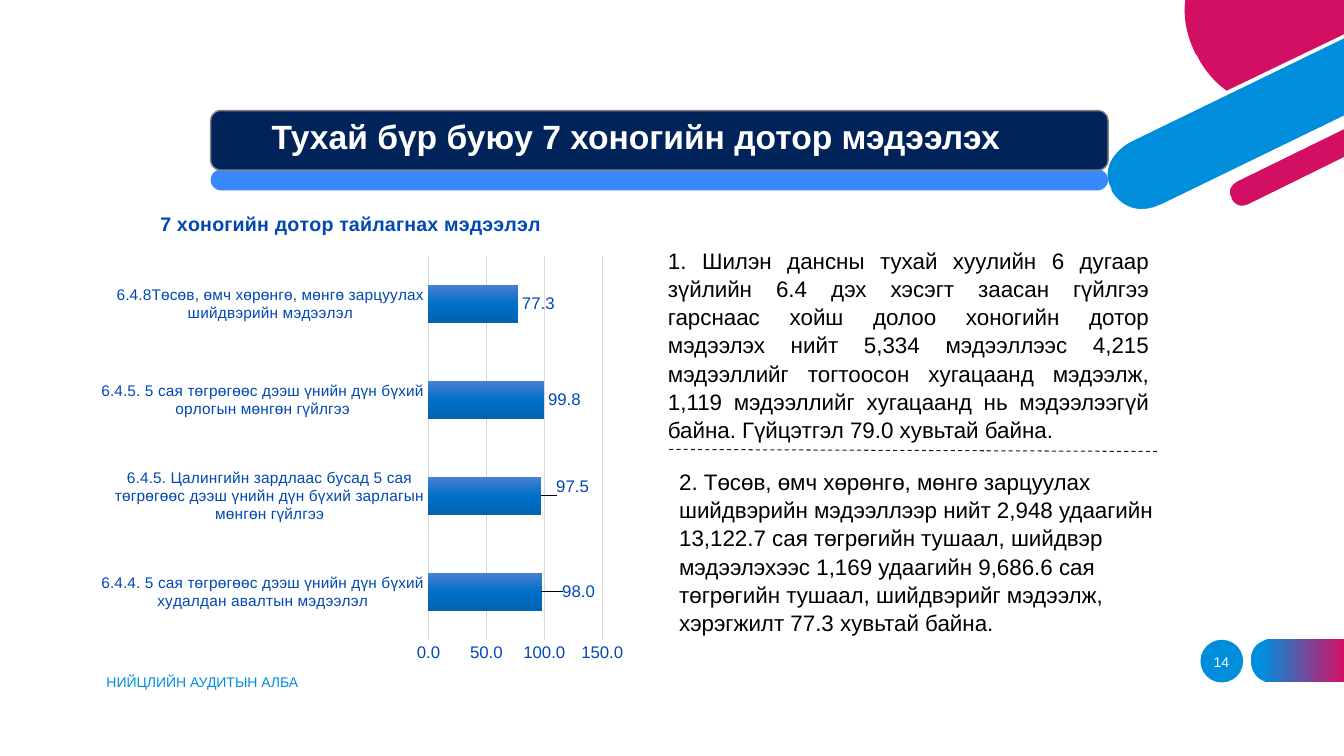
from lxml.etree import SubElement
from pptx import Presentation
from pptx.chart.data import CategoryChartData
from pptx.dml.color import RGBColor
from pptx.enum.chart import XL_CHART_TYPE as ChartType, XL_LABEL_POSITION as LabelPos, XL_TICK_MARK as Tick
from pptx.enum.dml import MSO_LINE as Dash
from pptx.enum.shapes import MSO_CONNECTOR as Connector, MSO_SHAPE as Shape
from pptx.enum.text import MSO_ANCHOR as Anchor, MSO_AUTO_SIZE as AutoSize, PP_ALIGN as Align
from pptx.oxml.ns import qn
from pptx.util import Pt

COLORS = {
    "sky": "008EDC", "pink": "D30F64", "white": "FFFFFF", "navy": "00245A",
    "band": "3888FF", "gray": "808080", "ink": "000000", "rule": "1C1C1C",
    "label": "0048B3", "grid": "D9D9D9",
    "bar_top": "4B80D0", "bar_mid": "006FC9", "bar_end": "0063B3",
}

CIRCLE = [(855.4, 40.3), (855.4, 40.3, 861.8, 54.7, 876.2, 64.8), (960, 24.5), (960, 0),
          (846.7, 0), (845.3, 10.8, 846.7, 23.8, 853.9, 38.2)]
WIDE_STRIPE = [(807.1, 100.1), (807.1, 100.1, 781.2, 113, 792.7, 136.1), (792.7, 136.8),
               (792.7, 136.8, 804.2, 159.8, 830.9, 146.9), (962, 83.2), (962, 24.9)]
THIN_STRIPE = [(962, 89.7), (883.4, 128.2), (883.4, 128.2, 873.4, 133.2, 878.4, 141.8),
               (878.4, 142.6), (878.4, 142.6, 882.7, 151.9, 892.8, 146.9), (962, 112.8)]
NUMBER_TAB = [(908.6, 487.4), (960, 487.4), (960, 456.5), (908.6, 456.5),
              (908.6, 456.5, 893.5, 456.5, 893.5, 471.6), (893.5, 472.3),
              (893.5, 472.3, 893.5, 487.4, 908.6, 487.4)]

MEASURES = [
    ("6.4.4. 5 сая төгрөгөөс дээш үнийн дүн бүхий худалдан авалтын мэдээлэл", 98.0),
    ("6.4.5. Цалингийн зардлаас бусад 5 сая төгрөгөөс дээш үнийн дүн бүхий зарлагын мөнгөн гүйлгээ", 97.5),
    ("6.4.5. 5 сая төгрөгөөс дээш үнийн дүн бүхий орлогын мөнгөн гүйлгээ", 99.8),
    ("6.4.8Төсөв, өмч хөрөнгө, мөнгө зарцуулах шийдвэрийн мэдээлэл", 77.3),
]
LABEL_SHIFTS = {0: (0.03, 0), 1: (0.02, -0.02)}

GLASS_TEXT = (
    "1. Шилэн дансны тухай хуулийн 6 дугаар зүйлийн 6.4 дэх хэсэгт заасан гүйлгээ гарснаас хойш "
    "долоо хоногийн дотор мэдээлэх нийт 5,334 мэдээллээс 4,215 мэдээллийг тогтоосон хугацаанд мэдээлж, "
    "1,119 мэдээллийг хугацаанд нь мэдээлээгүй байна. Гүйцэтгэл 79.0 хувьтай байна.")
BUDGET_TEXT = (
    "2. Төсөв, өмч хөрөнгө, мөнгө зарцуулах шийдвэрийн мэдээллээр нийт 2,948 удаагийн 13,122.7 сая "
    "төгрөгийн тушаал, шийдвэр мэдээлэхээс 1,169 удаагийн 9,686.6 сая төгрөгийн тушаал, шийдвэрийг "
    "мэдээлж, хэрэгжилт 77.3 хувьтай байна.")


def rgb(name):
    return RGBColor.from_string(COLORS[name])


def style_font(font, size, color, bold=False):
    font.name, font.size, font.bold = "Arial", Pt(size), bold
    font.color.rgb = rgb(color)


def write(frame, text, size=16, color="ink", bold=False, align=Align.LEFT, spacing=None):
    paragraph = frame.paragraphs[0]
    paragraph.alignment = align
    if spacing:
        paragraph.line_spacing = spacing
    run = paragraph.add_run()
    run.text = text
    style_font(run.font, size, color, bold)
    return run


def set_stops(stop_list, stops):
    for stop in list(stop_list):
        stop_list.remove(stop)
    for percent, color in stops:
        stop = SubElement(stop_list, qn("a:gs"), pos=str(percent * 1000))
        SubElement(stop, qn("a:srgbClr"), val=COLORS[color])


def set_layout(parent, index, inner=False, **fractions):
    for old in parent.findall(qn("c:layout")):
        parent.remove(old)
    layout = SubElement(parent, qn("c:layout"))
    parent.insert(index, layout)
    manual = SubElement(layout, qn("c:manualLayout"))
    if inner:
        SubElement(manual, qn("c:layoutTarget"), val="inner")
    for tag, value in fractions.items():
        SubElement(manual, qn(f"c:{tag}"), val=str(value))


def curve(start, segment, steps=12):
    if len(segment) == 2:
        return [segment]
    x1, y1, x2, y2, x3, y3 = segment

    def blend(t, a, b, c, d):
        return (1 - t) ** 3 * a + 3 * t * (1 - t) ** 2 * b + 3 * t * t * (1 - t) * c + t ** 3 * d

    return [(blend(i / steps, start[0], x1, x2, x3), blend(i / steps, start[1], y1, y2, y3))
            for i in range(1, steps + 1)]


class Deck:
    def __init__(self):
        self.presentation = Presentation()
        self.presentation.slide_width, self.presentation.slide_height = Pt(960), Pt(540)
        self.slide = self.presentation.slides.add_slide(self.presentation.slide_layouts[5])
        self.shapes = self.slide.shapes

    def finish(self, shape, fill, line=None, width=1):
        shape.shadow.inherit = False
        if fill:
            shape.fill.solid()
            shape.fill.fore_color.rgb = rgb(fill)
        if line:
            shape.line.color.rgb = rgb(line)
            shape.line.width = Pt(width)
        else:
            shape.line.fill.background()
        return shape

    def preset(self, kind, box, fill, line=None, radius=None):
        shape = self.shapes.add_shape(kind, *map(Pt, box))
        if radius is not None:
            shape.adjustments[0] = radius
        return self.finish(shape, fill, line)

    def outline(self, segments, fill=None, line=None, width=1, stops=None):
        points = [segments[0]]
        for segment in segments[1:]:
            points += curve(points[-1], segment)
        corners = [(Pt(x), Pt(y)) for x, y in points]
        builder = self.shapes.build_freeform(*corners[0], scale=1.0)
        builder.add_line_segments(corners[1:], close=True)
        shape = self.finish(builder.convert_to_shape(), fill, line, width)
        if stops:
            shape.fill.gradient()
            shape.fill.gradient_angle = 0
            set_stops(shape.element.xpath(".//a:gsLst")[0], stops)

    def text(self, box, text, anchor=Anchor.TOP, **fmt):
        frame = self.shapes.add_textbox(*map(Pt, box)).text_frame
        frame.word_wrap = True
        frame.vertical_anchor = anchor
        write(frame, text, **fmt)

    def title(self, box, text, **fmt):
        title = self.shapes.title
        title.left, title.top, title.width, title.height = map(Pt, box)
        frame = title.text_frame
        frame.auto_size, frame.word_wrap, frame.vertical_anchor = AutoSize.NONE, True, Anchor.TOP
        run = write(frame, text, **fmt)
        fill = run.font.fill
        effects = SubElement(run.font.fill and title.element.xpath(".//a:rPr")[0], qn("a:effectLst"))
        title.element.xpath(".//a:solidFill")[0].addnext(effects)
        shadow = SubElement(effects, qn("a:outerShdw"), blurRad="38100", dist="25400", dir="2700000")
        SubElement(SubElement(shadow, qn("a:srgbClr"), val=COLORS["ink"]), qn("a:alpha"), val="60000")
        self.shapes[-1].element.addnext(title.element)

    def dashed_rule(self, start, end):
        rule = self.shapes.add_connector(Connector.STRAIGHT, *map(Pt, start + end))
        rule.line.color.rgb = rgb("rule")
        rule.line.width, rule.line.dash_style = Pt(0.75), Dash.DASH
        SubElement(rule.element.spPr, qn("a:effectLst"))

    def bar_chart(self, box, heading, measures):
        data = CategoryChartData(number_format="0.0")
        data.categories = [name for name, _ in measures]
        data.add_series("Series 1", [value for _, value in measures])
        chart = self.shapes.add_chart(ChartType.BAR_CLUSTERED, *map(Pt, box), data).chart
        style_font(chart.font, 10, "ink")
        chart.has_legend = False
        write(chart.chart_title.text_frame, heading, 14, "label", True, Align.CENTER)
        set_layout(chart.element.xpath(".//c:title")[0], 1, xMode="edge", yMode="edge", x=0.12, y=0.02)
        set_layout(chart.element.xpath(".//c:plotArea")[0], 0, True, xMode="edge", yMode="edge",
                   x=0.62, y=0.12, w=0.32, h=0.81)

        categories, values = chart.category_axis, chart.value_axis
        for axis, size in ((categories, 11), (values, 12)):
            axis.major_tick_mark = axis.minor_tick_mark = Tick.NONE
            style_font(axis.tick_labels.font, size, "label")
        values.minimum_scale, values.maximum_scale, values.major_unit = 0, 150, 50
        values.tick_labels.number_format, values.tick_labels.number_format_is_linked = "0.0", False
        values.format.line.fill.background()
        for line in (categories.format.line, values.major_gridlines.format.line):
            line.color.rgb, line.width = rgb("grid"), Pt(0.75)

        plot = chart.plots[0]
        plot.gap_width, plot.vary_by_categories = 150, False
        series = plot.series[0]
        series.format.fill.gradient()
        series.format.fill.gradient_angle = 270
        set_stops(chart.element.xpath(".//c:ser//a:gsLst")[0],
                  [(0, "bar_top"), (50, "bar_mid"), (100, "bar_end")])
        labels = series.data_labels
        labels.show_value, labels.position = True, LabelPos.OUTSIDE_END
        labels.number_format, labels.number_format_is_linked = "0.0", False
        style_font(labels.font, 12, "label")
        for index, (x, y) in LABEL_SHIFTS.items():
            label = series.points[index].data_label
            style_font(label.font, 12, "label")
            label.position = LabelPos.OUTSIDE_END
            set_layout(chart.element.xpath(f".//c:dLbl[c:idx/@val='{index}']")[0], 1, x=x, y=y)


def main():
    deck = Deck()
    deck.preset(Shape.OVAL, (857.5, 457, 30.5, 30.5), "sky")
    deck.outline(NUMBER_TAB, stops=[(12, "sky"), (100, "pink")])
    deck.outline(WIDE_STRIPE, "sky", "white", 2.75)
    deck.outline(CIRCLE, "pink")
    deck.outline(THIN_STRIPE, "pink", "white", 2.75)
    deck.text((69, 472.5, 324, 29), "НИЙЦЛИЙН АУДИТЫН АЛБА", Anchor.MIDDLE, size=10, color="sky")
    deck.text((851, 458, 43, 29), "14", Anchor.MIDDLE, size=10, color="white", align=Align.CENTER)
    deck.preset(Shape.ROUNDED_RECTANGLE, (150.5, 121, 641, 15), "band", radius=0.5)
    deck.preset(Shape.ROUNDED_RECTANGLE, (150.5, 79, 641, 42.5), "navy", "gray", 0.17)
    deck.title((180, 79, 548.5, 36), "Тухай бүр буюу 7 хоногийн дотор мэдээлэх",
               size=24, color="white", bold=True, align=Align.CENTER)
    deck.bar_chart((65.5, 142, 388, 339), "7 хоногийн дотор тайлагнах мэдээлэл", MEASURES)
    deck.text((470, 172, 358, 143), GLASS_TEXT, align=Align.JUSTIFY, spacing=1.05)
    deck.dashed_rule((478, 321), (828, 322.5))
    deck.text((478, 330, 361.5, 124), BUDGET_TEXT, spacing=1.05)
    deck.presentation.save("out.pptx")


if __name__ == "__main__":
    main()
